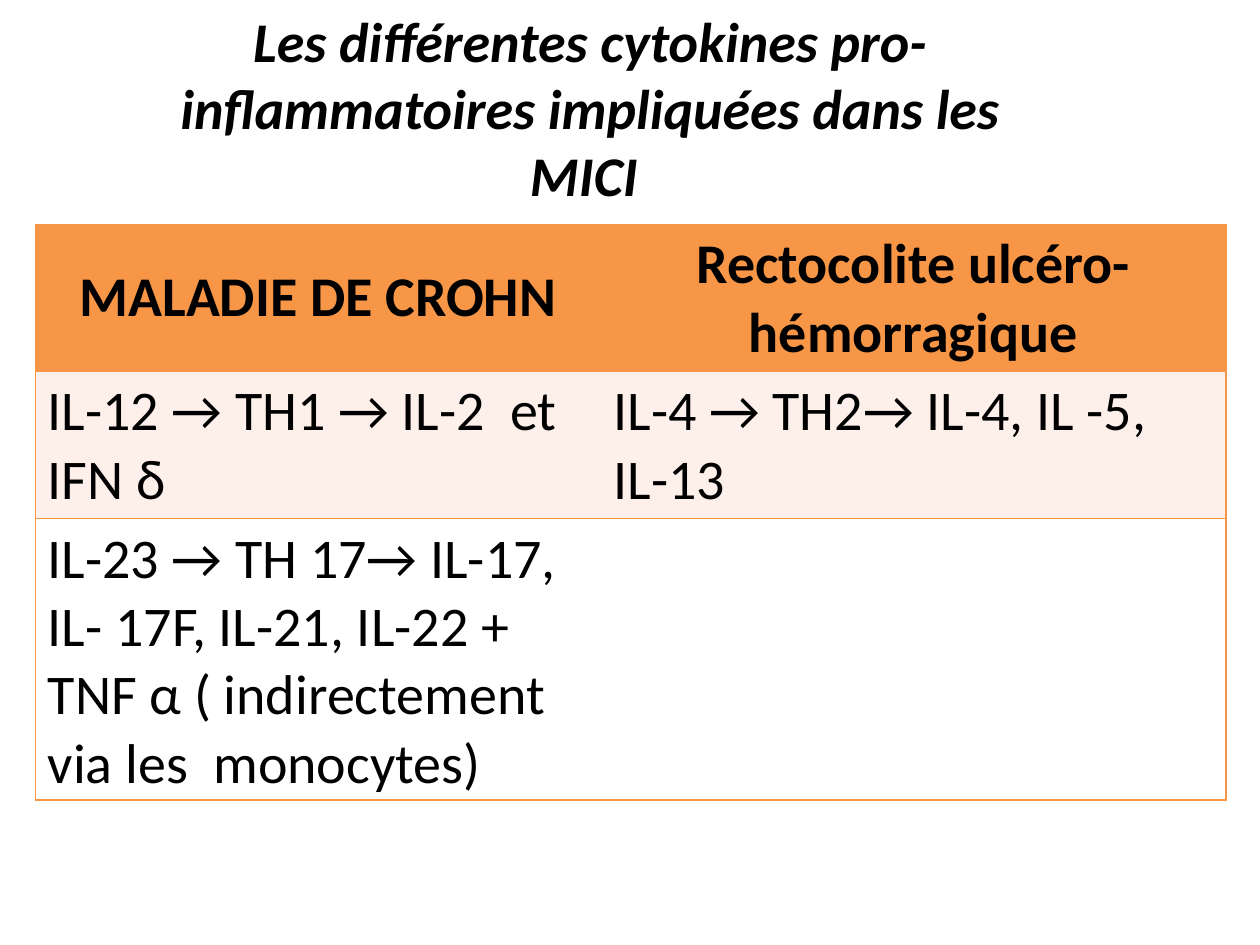
import pptx
import pptx.util
import pptx.dml.color
import pptx.enum.text
import pptx.oxml
import pptx.oxml.ns

Inches = pptx.util.Inches
ALIGN = pptx.enum.text.PP_ALIGN
ANCHOR = pptx.enum.text.MSO_ANCHOR

ORANGE, PINK, WHITE, BLACK = "F79646", "FDEFE9", "FFFFFF", "000000"
PLAIN = "{2D5ABB26-0587-4C30-8999-92F81FD0307C}"  # table style without grid

TITLE = "Les différentes cytokines pro-inflammatoires impliquées dans les MICI "
ROWS = [
    ("MALADIE DE CROHN", "Rectocolite ulcéro-hémorragique"),
    ("IL-12 → TH1 → IL-2  et IFN δ", "IL-4 → TH2→ IL-4, IL -5, IL-13"),
    ("IL-23 → TH 17→ IL-17, IL- 17F, IL-21, IL-22 + TNF α "
     "( indirectement via les  monocytes)", ""),
]
FILLS = [ORANGE, PINK, WHITE]
WIDTHS = [4.49, 4.96]
HEIGHT = 1.04


def color(code):
    return pptx.dml.color.RGBColor.from_string(code)


def style(para, bold=False, italic=False, align=ALIGN.LEFT):
    para.alignment = align
    font = para.font
    font.name, font.size = "Calibri", pptx.util.Pt(32)
    font.bold, font.italic = bold, italic
    font.color.rgb = color(BLACK)


def border(cell, sides):
    props = cell._tc.get_or_add_tcPr()
    for side in sides:
        props.append(pptx.oxml.parse_xml(
            f'<a:ln{side} {pptx.oxml.ns.nsdecls("a")} w="12700"><a:solidFill>'
            f'<a:srgbClr val="{ORANGE}"/></a:solidFill></a:ln{side}>'))


def add_title(slide):
    title = slide.shapes.title
    title.left, title.top = Inches(1.14), Inches(0)
    title.width, title.height = Inches(7.09), Inches(1.72)
    frame = title.text_frame
    frame.text = TITLE
    frame.word_wrap = True
    frame.auto_size = pptx.enum.text.MSO_AUTO_SIZE.SHAPE_TO_FIT_TEXT
    frame.vertical_anchor = ANCHOR.TOP
    style(frame.paragraphs[0], bold=True, italic=True, align=ALIGN.CENTER)


def add_grid(slide):
    frame = slide.shapes.add_table(
        len(ROWS), len(WIDTHS), Inches(0.28), Inches(1.78),
        Inches(sum(WIDTHS)), Inches(HEIGHT * len(ROWS)))
    table = frame.table
    table._tbl.tblPr.find(pptx.oxml.ns.qn("a:tableStyleId")).text = PLAIN
    for col, width in zip(table.columns, WIDTHS):
        col.width = Inches(width)
    for r, (texts, fill) in enumerate(zip(ROWS, FILLS)):
        head = r == 0
        for c, text in enumerate(texts):
            cell = table.cell(r, c)
            cell.text = text
            border(cell, "RTB" if c else "LTB")
            cell.fill.solid()
            cell.fill.fore_color.rgb = color(fill)
            cell.vertical_anchor = ANCHOR.MIDDLE if head else ANCHOR.TOP
            style(cell.text_frame.paragraphs[0], bold=head,
                  align=ALIGN.CENTER if head else ALIGN.LEFT)
    # Rows grow with their text
    frame.height = Inches(4.57)


def main():
    deck = pptx.Presentation()
    deck.slide_width, deck.slide_height = Inches(10), Inches(7.5)
    slide = deck.slides.add_slide(deck.slide_layouts[5])  # title only
    add_grid(slide)
    add_title(slide)
    deck.save("out.pptx")


if __name__ == "__main__":
    main()
